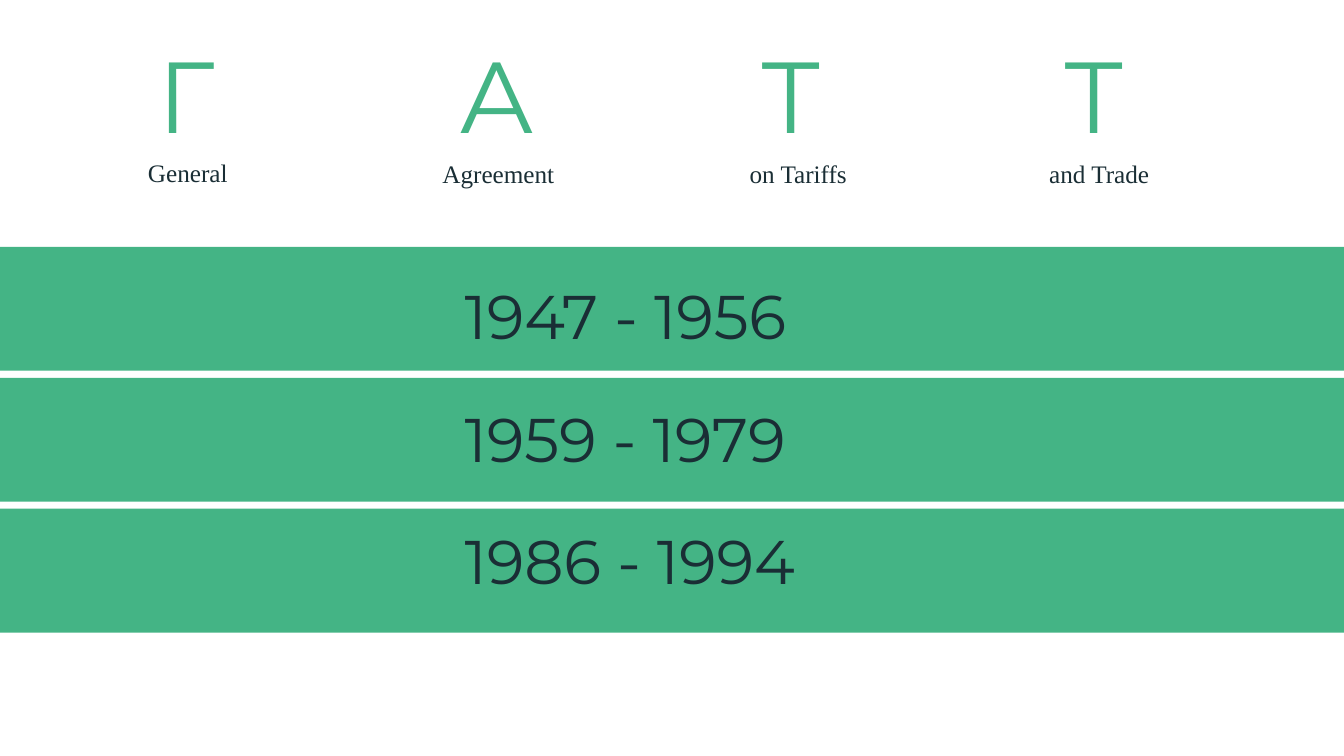
"""Build the GATT slide: acronym, its meaning and three bands of negotiation periods."""
import pptx
import pptx.dml.color
import pptx.enum.shapes
import pptx.enum.text
import pptx.oxml.ns
import pptx.util
from lxml import etree

Cm = pptx.util.Cm

LETTERS = ["Г", "А", "Т", "Т"]
CAPTIONS = [
    ("General", 3.48, 3.84, 2.67),
    ("Agreement", 10.9, 3.86, 3.38),
    ("on Tariffs", 18.64, 3.86, 3.38),
    ("and Trade", 26.19, 3.86, 3.15),
]
PERIODS = ["1947 - 1956", "1959 - 1979", "1986 - 1994"]

THEME = {
    "green": pptx.dml.color.RGBColor.from_string("44B485"),
    "dark": pptx.dml.color.RGBColor.from_string("1A2E35"),
    "display": "Montserrat",
    "body": "Times New Roman",
    "letter_size": 72,
    "period_size": 44,
    "caption_size": 18,
}

SLIDE_WIDTH, SLIDE_HEIGHT = 33.87, 19.05
LETTER_PITCH = 7.62
BAND_TOP, BAND_PITCH, BAND_HEIGHT = 6.22, 3.3, 3.12
PERIOD_TOP, PERIOD_PITCH = 6.88, 3.09


def add_text(page, text, place, font, size, color, wrap=True):
    """Add a one-run text box and return it."""
    box = page.shapes.add_textbox(*map(Cm, place))
    box.text_frame.word_wrap = wrap
    span = box.text_frame.paragraphs[0].add_run()
    span.text = text
    span.font.name = THEME[font]
    span.font.size = pptx.util.Pt(THEME[size])
    span.font.color.rgb = THEME[color]
    return box


def add_band(page, top):
    """Add a full-width green band."""
    band = page.shapes.add_shape(
        pptx.enum.shapes.MSO_SHAPE.RECTANGLE, 0, Cm(top), Cm(SLIDE_WIDTH), Cm(BAND_HEIGHT))
    band.shadow.inherit = False
    band.fill.solid()
    band.fill.fore_color.rgb = THEME["green"]
    band.line.fill.background()


def add_acronym(page):
    """Add the large letters, spaced by tab stops."""
    box = add_text(page, "\t".join(LETTERS), (3.71, 0.69, 25.4, 3.68),
                   "display", "letter_size", "green")
    box.text_frame.vertical_anchor = pptx.enum.text.MSO_ANCHOR.MIDDLE
    para = box.text_frame.paragraphs[0]
    para.line_spacing = 0.9
    tabs = etree.SubElement(para._p.get_or_add_pPr(), pptx.oxml.ns.qn("a:tabLst"))
    for index in range(1, len(LETTERS)):
        etree.SubElement(tabs, pptx.oxml.ns.qn("a:tab"),
                         pos=str(Cm(index * LETTER_PITCH)), algn="l")


def main():
    """Assemble and save the deck."""
    deck = pptx.Presentation()
    deck.slide_width, deck.slide_height = Cm(SLIDE_WIDTH), Cm(SLIDE_HEIGHT)
    page = deck.slides.add_slide(deck.slide_layouts[6])
    for index in range(len(PERIODS)):
        add_band(page, BAND_TOP + index * BAND_PITCH)
    add_acronym(page)
    for text, left, top, width in CAPTIONS:
        add_text(page, text, (left, top, width, 1.02), "body", "caption_size", "dark")
    for index, period in enumerate(PERIODS):
        add_text(page, period, (11.46, PERIOD_TOP + index * PERIOD_PITCH, 10.97, 2.13),
                 "display", "period_size", "dark", wrap=False)
    deck.save("out.pptx")


if __name__ == "__main__":
    main()
